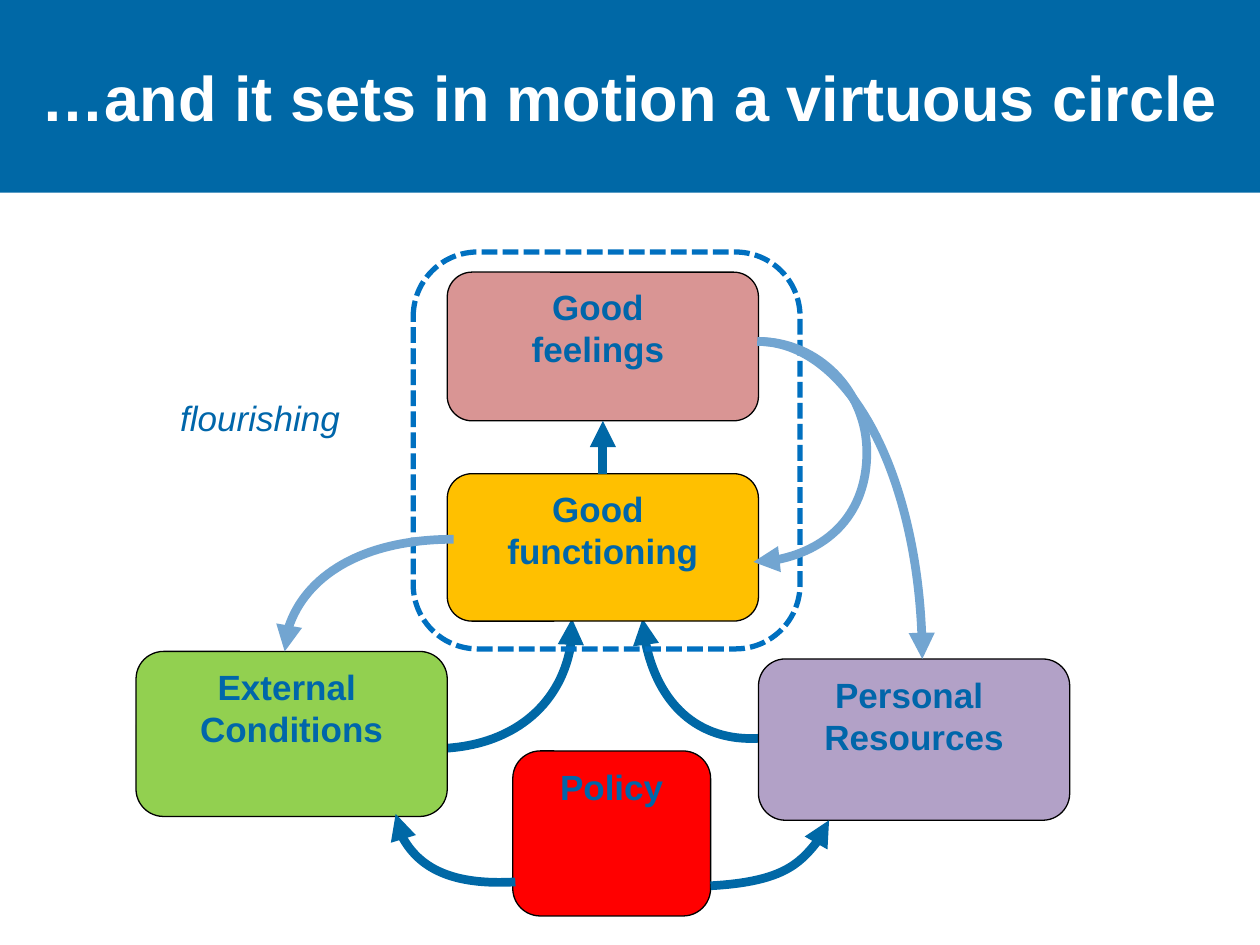
from lxml import etree
from pptx import Presentation
from pptx.dml.color import RGBColor
from pptx.enum.dml import MSO_LINE
from pptx.enum.shapes import MSO_CONNECTOR, MSO_SHAPE
from pptx.enum.text import MSO_ANCHOR, PP_ALIGN
from pptx.oxml.ns import qn
from pptx.util import Inches, Pt

RECT = MSO_SHAPE.RECTANGLE
ROUND = MSO_SHAPE.ROUNDED_RECTANGLE
STRAIGHT = MSO_CONNECTOR.STRAIGHT
DASH = MSO_LINE.SQUARE_DOT
TOP, MIDDLE = MSO_ANCHOR.TOP, MSO_ANCHOR.MIDDLE
CENTER = PP_ALIGN.CENTER
BLUE, TEXT_BLUE, PALE_BLUE = "0068A6", "0066AA", "72A5D1"
FRAME_BLUE, BLACK, WHITE = "0070C0", "000000", "FFFFFF"
TOP_SIDE, BOTTOM_SIDE = 0, 2


def rgb(value):
    return RGBColor.from_string(value)


def write(sp, lines, size=20, color=TEXT_BLUE, bold=False, italic=False, anchor=TOP):
    tf = sp.text_frame
    tf.word_wrap = True
    tf.vertical_anchor = anchor
    for i, text in enumerate(lines):
        p = tf.paragraphs[0] if i == 0 else tf.add_paragraph()
        p.alignment = CENTER
        r = p.add_run()
        r.text = text
        r.font.name = "Arial"
        r.font.size = Pt(size)
        r.font.bold = bold
        r.font.italic = italic
        r.font.color.rgb = rgb(color)


def add_box(s, kind, box, fill=None, line=None, width=0.75):
    sp = s.shapes.add_shape(kind, *map(Inches, box))
    sp.shadow.inherit = False
    if fill:
        sp.fill.solid()
        sp.fill.fore_color.rgb = rgb(fill)
    else:
        sp.fill.background()
    if line:
        sp.line.color.rgb = rgb(line)
        sp.line.width = Pt(width)
    else:
        sp.line.fill.background()
    return sp


def style_arrow(sp, color):
    sp.line.color.rgb = rgb(color)
    sp.line.width = Pt(5)
    etree.SubElement(sp.line._get_or_add_ln(), qn("a:tailEnd"), type="triangle")


def add_curve(s, origin, color, points):
    left, top = origin
    pts = [(Inches(left + x), Inches(top + y)) for x, y in points]
    fb = s.shapes.build_freeform(*pts[0])
    fb.add_line_segments(pts[1:], close=False)
    sp = fb.convert_to_shape()
    sp.shadow.inherit = False
    sp.fill.background()
    style_arrow(sp, color)
    path = next(sp._element.iter(qn("a:path")))
    segments = path.findall(qn("a:lnTo"))
    for i in range(0, len(segments), 3):
        bezier = etree.SubElement(path, qn("a:cubicBezTo"))
        for segment in segments[i:i + 3]:
            bezier.append(segment[0])
            path.remove(segment)


def add_straight_arrow(s, start, end):
    cn = s.shapes.add_connector(STRAIGHT, 0, 0, 0, 0)
    cn.begin_connect(start, TOP_SIDE)
    cn.end_connect(end, BOTTOM_SIDE)
    style_arrow(cn, BLUE)
    etree.SubElement(cn._element.spPr, qn("a:effectLst"))


def add_title(s, box):
    sp = add_box(s, RECT, box, BLUE)
    write(sp, ["…and it sets in motion a virtuous circle"],
          size=36, color=WHITE, bold=True, anchor=MIDDLE)


def add_label(s, box):
    sp = s.shapes.add_textbox(*map(Inches, box))
    write(sp, ["flourishing"], italic=True)


def add_cycle(s, box):
    left, top, width, height = box
    origin = left, top
    card = 2.47
    middle = (width - card) / 2
    nodes = {
        "personal": (width - card, 3.23, card, 1.28, "B2A1C7", ["Personal ", "Resources"]),
        "functioning": (middle, 1.76, card, 1.17, "FFC000", ["Good ", "functioning"]),
        "external": (0, 3.17, card, 1.31, "92D050", ["External ", "Conditions"]),
        "feelings": (middle, 0.16, card, 1.18, "D99594", ["Good ", "feelings "]),
        "policy": (2.99, height - 1.31, 1.57, 1.31, "FF0000", ["Policy"]),
    }
    into_functioning = [
        [(4.95, 3.86), (4.45, 3.89), (4.05, 3.49), (4.02, 2.91)],
        [(2.44, 3.94), (3.03, 3.91), (3.5, 3.46), (3.46, 2.91)],
    ]
    from_policy = [
        [(3.01, 5), (2.49, 5.03), (2.08, 4.8), (2.06, 4.46)],
        [(4.56, 5.03), (5.11, 5), (5.4, 4.78), (5.5, 4.51)],
    ]
    feedback = [
        [(2.52, 2.28), (1.78, 2.28), (1.18, 2.68), (1.18, 3.17)],
        [(4.94, 0.71), (5.41, 0.71), (5.8, 1.1), (5.8, 1.59),
         (5.8, 2.07), (5.41, 2.46), (4.9, 2.46)],
        [(4.93, 0.71), (5.65, 0.71), (6.24, 1.84), (6.24, 3.23)],
    ]
    for points in into_functioning:
        add_curve(s, origin, BLUE, points)
    cards = {}
    for name, (x, y, w, h, fill, lines) in nodes.items():
        sp = add_box(s, ROUND, (left + x, top + y, w, h), fill, BLACK)
        write(sp, lines, bold=True)
        cards[name] = sp
    add_straight_arrow(s, cards["functioning"], cards["feelings"])
    frame = add_box(s, ROUND, (left + 2.2, top, 3.07, 3.15), line=FRAME_BLUE, width=3)
    frame.line.dash_style = DASH
    for color, curves in ((BLUE, from_policy), (PALE_BLUE, feedback)):
        for points in curves:
            add_curve(s, origin, color, points)


def main():
    prs = Presentation()
    prs.slide_width, prs.slide_height = Inches(10), Inches(7.5)
    s = prs.slides.add_slide(prs.slide_layouts[6])
    add_title(s, (0, 0, 10, 1.53))
    add_cycle(s, (1.08, 2, 7.41, 5.27))
    add_label(s, (1, 3.1, 2.13, 0.44))
    prs.save("out.pptx")


if __name__ == "__main__":
    main()
